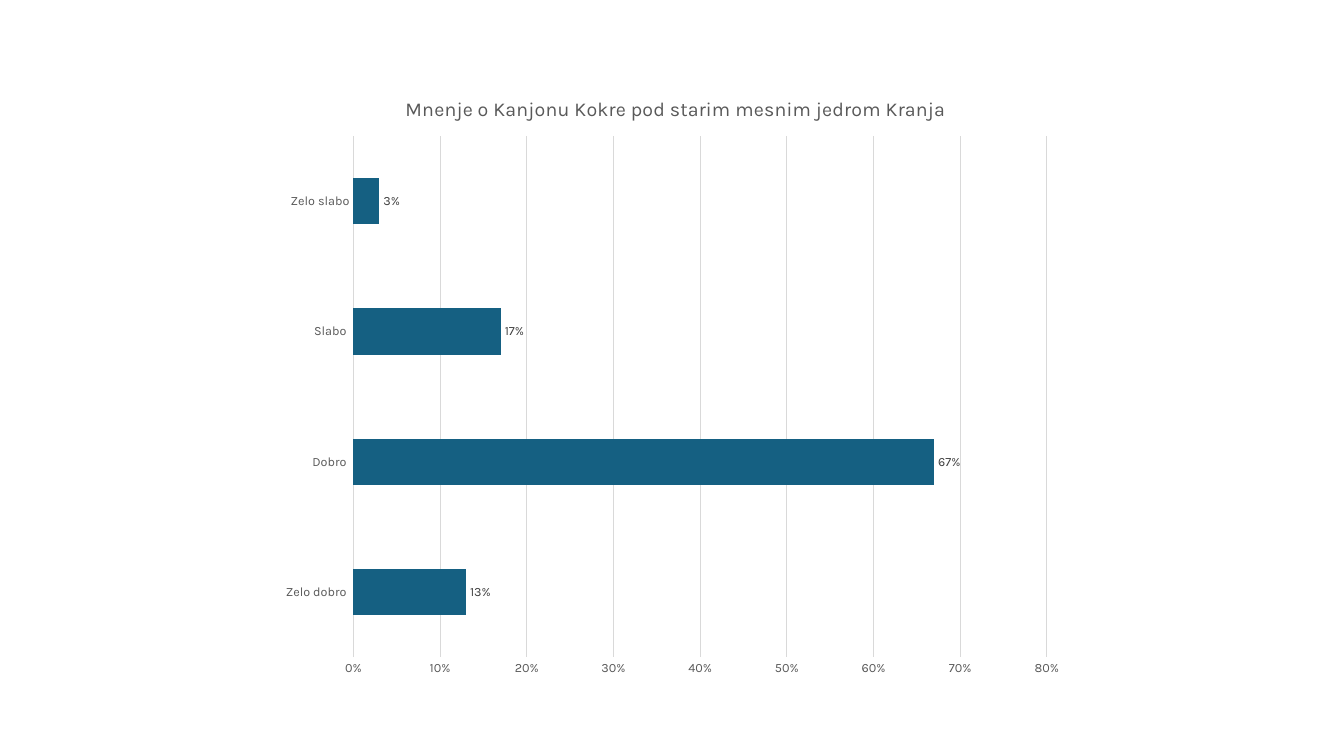
from dataclasses import dataclass

from lxml import etree
from pptx import Presentation
from pptx.chart.data import CategoryChartData
from pptx.dml.color import RGBColor
from pptx.enum.chart import XL_CHART_TYPE, XL_LABEL_POSITION, XL_TICK_MARK
from pptx.oxml.ns import qn
from pptx.util import Inches, Pt

BAR = XL_CHART_TYPE.BAR_CLUSTERED
OUTSIDE_END = XL_LABEL_POSITION.OUTSIDE_END
NO_TICKS = XL_TICK_MARK.NONE
PERCENT = "0%"
TITLE = "Mnenje o Kanjonu Kokre pod starim mesnim jedrom Kranja"
OPINIONS = {"Zelo dobro ": 0.13, "Dobro ": 0.67, "Slabo ": 0.17, "Zelo slabo": 0.03}


@dataclass(frozen=True)
class Theme:
    font: str = "Karla"
    bar: str = "156082"
    text: str = "595959"
    label: str = "404040"
    grid: str = "D9D9D9"
    title_size: int = 14
    text_size: int = 9
    line_width: float = 0.75


THEME = Theme()


def set_attrs(obj, values):
    for name, value in values.items():
        setattr(obj, name, value)


def style_font(font, size, color):
    set_attrs(font, {"name": THEME.font, "size": Pt(size), "bold": False})
    font.color.rgb = RGBColor.from_string(color)


def style_line(line):
    line.color.rgb = RGBColor.from_string(THEME.grid)
    line.width = Pt(THEME.line_width)


def style_axis(axis):
    set_attrs(axis, {"major_tick_mark": NO_TICKS, "minor_tick_mark": NO_TICKS})
    style_font(axis.tick_labels.font, THEME.text_size, THEME.text)


def place(parent, shares, inner=False):
    layout = parent.find(qn("c:layout"))
    if layout is None:
        layout = etree.Element(qn("c:layout"))
        tx = parent.find(qn("c:tx"))
        if tx is None:
            parent.insert(0, layout)
        else:
            tx.addnext(layout)
    manual = etree.SubElement(layout, qn("c:manualLayout"))
    settings = {"layoutTarget": "inner"} if inner else {}
    settings.update(xMode="edge", yMode="edge", **shares)
    for name, value in settings.items():
        etree.SubElement(manual, qn(f"c:{name}")).set("val", str(value))


def add_title(chart, text):
    tf = chart.chart_title.text_frame
    tf.text = text
    style_font(tf.paragraphs[0].runs[0].font, THEME.title_size, THEME.text)
    chart.chart_title.include_in_layout = False
    place(chart.chart_title._element, {"x": 0.16, "y": 0.03})


def style_bars(plot):
    set_attrs(plot, {"gap_width": 182, "vary_by_categories": False})
    fill = plot.series[0].format.fill
    fill.solid()
    fill.fore_color.rgb = RGBColor.from_string(THEME.bar)
    labels = plot.series[0].data_labels
    set_attrs(labels, {
        "show_value": True,
        "position": OUTSIDE_END,
        "number_format": PERCENT,
        "number_format_is_linked": False,
    })
    style_font(labels.font, THEME.text_size, THEME.label)


def add_bar_chart(prs, s, box, title, values):
    data = CategoryChartData(number_format=PERCENT)
    data.categories = list(values)
    data.add_series("Series 1", list(values.values()))
    sizes = (prs.slide_width, prs.slide_height) * 2
    bounds = [int(share * size) for share, size in zip(box, sizes)]
    chart = s.shapes.add_chart(BAR, *bounds, data).chart
    chart.has_legend = False
    style_font(chart.font, THEME.text_size, THEME.text)
    add_title(chart, title)
    style_bars(chart.plots[0])
    for axis in (chart.category_axis, chart.value_axis):
        style_axis(axis)
    style_line(chart.category_axis.format.line)
    axis = chart.value_axis
    set_attrs(axis, {"minimum_scale": 0, "maximum_scale": 0.8, "major_unit": 0.1})
    set_attrs(axis.tick_labels, {
        "number_format": PERCENT,
        "number_format_is_linked": False,
    })
    axis.format.line.fill.background()
    style_line(axis.major_gridlines.format.line)
    plot_area = chart._chartSpace.chart.plotArea
    place(plot_area, {"x": 0.1, "y": 0.1, "w": 0.86, "h": 0.85}, inner=True)


def main():
    prs = Presentation()
    set_attrs(prs, {"slide_width": Inches(13.33), "slide_height": Inches(7.5)})
    s = prs.slides.add_slide(prs.slide_layouts[6])
    add_bar_chart(prs, s, (0.203, 0.099, 0.6, 0.811), TITLE, OPINIONS)
    prs.save("out.pptx")


if __name__ == "__main__":
    main()
